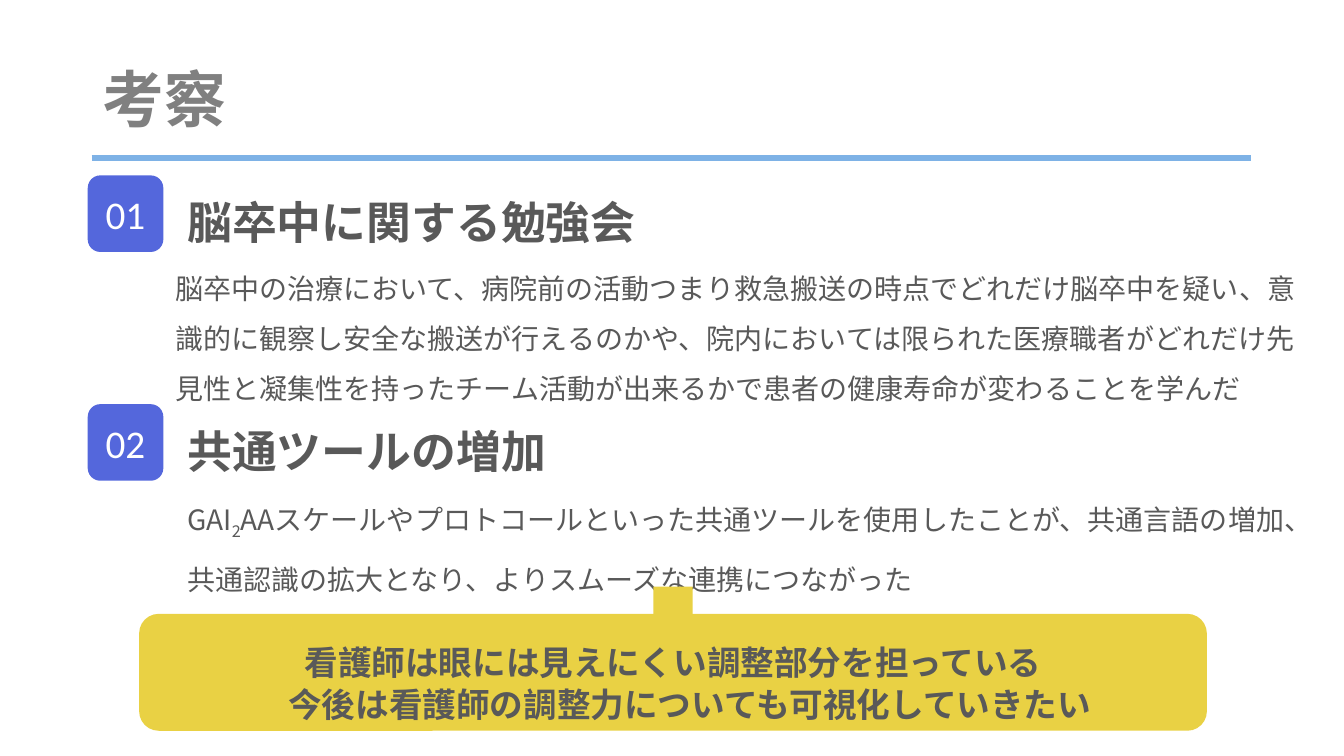
from dataclasses import dataclass

import pptx
import pptx.dml.color
import pptx.enum.shapes
import pptx.enum.text
import pptx.oxml.ns
import pptx.util
from lxml import etree

Inches = pptx.util.Inches
Pt = pptx.util.Pt
SHAPES = pptx.enum.shapes.MSO_SHAPE
ANCHOR = pptx.enum.text.MSO_ANCHOR
ALIGN = pptx.enum.text.PP_ALIGN

COLORS = {
    "title": "808080",
    "body": "595959",
    "rule": "7EB2E6",
    "badge": "5467DC",
    "conclusion": "E9D144",
    "white": "FFFFFF",
}
CALIBRI = "Calibri"
NOTO = "Noto Sans CJK JP"


@dataclass
class Style:
    size: float
    color: str
    font: str = NOTO
    bold: bool = False


@dataclass
class Section:
    number: str
    heading: str
    top: float
    heading_width: float


@dataclass
class Body:
    left: float
    top: float
    width: float
    height: float
    top_inset: float
    spacing: float
    spans: list[tuple[str, bool]]  # text, subscript


TITLE = Style(44, "title", CALIBRI, True)
HEADING = Style(32, "body", CALIBRI, True)
BADGE = Style(28, "white", CALIBRI)
BODY = Style(20, "body")
CONCLUSION = Style(24, "body", bold=True)

SECTIONS = [
    Section("01", "脳卒中に関する勉強会", 1.74, 4.92),
    Section("02", "共通ツールの増加", 4.01, 4.46),
]
BODIES = [
    Body(1.64, 2.44, 11.5, 1.57, 0.09, 35.7, [
        ("脳卒中の治療において、病院前の活動つまり救急搬送の時点でどれだけ脳卒中を疑い、"
         "意識的に観察し安全な搬送が行えるのかや、院内においては限られた医療職者が"
         "どれだけ先見性と凝集性を持ったチーム活動が出来るかで患者の健康寿命が"
         "変わることを学んだ", False),
    ]),
    Body(1.76, 4.77, 11.26, 1.41, 0.05, 39.3, [
        ("GAI", False),
        ("2", True),
        ("AAスケールやプロトコールといった共通ツールを使用したことが、共通言語の増加、"
         "共通認識の拡大となり、よりスムーズな連携につながった", False),
    ]),
]
CONCLUSION_LINES = [
    ("看護師は眼には見えにくい調整部分を担っている", 0),
    ("今後は看護師の調整力についても可視化していきたい", 0.33),
]


def rgb(name: str) -> pptx.dml.color.RGBColor:
    return pptx.dml.color.RGBColor.from_string(COLORS[name])


def add_span(para, text: str, style: Style, subscript: bool = False) -> None:
    span = para.add_run()
    span.text = text
    span.font.size = Pt(style.size)
    span.font.bold = style.bold
    span.font.color.rgb = rgb(style.color)
    span.font.name = style.font
    properties = span.font._element
    etree.SubElement(properties, pptx.oxml.ns.qn("a:ea"), typeface=NOTO)
    if subscript:
        properties.set("baseline", "-25000")


def add_text_box(shapes, left: float, top: float, width: float, height: float):
    box = shapes.add_textbox(Inches(left), Inches(top), Inches(width), Inches(height))
    box.text_frame.word_wrap = True
    return box


def add_filled_shape(shapes, kind, left: float, top: float, width: float,
                     height: float, color: str):
    box = shapes.add_shape(kind, Inches(left), Inches(top), Inches(width), Inches(height))
    box.shadow.inherit = False
    box.fill.solid()
    box.fill.fore_color.rgb = rgb(color)
    box.line.fill.background()
    box.text_frame.vertical_anchor = ANCHOR.MIDDLE
    return box


def add_title(page) -> None:
    frame = add_text_box(page.shapes, 0.92, 0.29, 11.5, 1.45).text_frame
    frame.vertical_anchor = ANCHOR.MIDDLE
    para = frame.paragraphs[0]
    para.line_spacing = 0.9
    add_span(para, "考察", TITLE)


def add_rule(page) -> None:
    rule = page.shapes.add_connector(
        pptx.enum.shapes.MSO_CONNECTOR.STRAIGHT,
        Inches(0.91), Inches(1.57), Inches(12.41), Inches(1.57))
    rule.line.color.rgb = rgb("rule")
    rule.line.width = Pt(4)
    etree.SubElement(rule._element.spPr, pptx.oxml.ns.qn("a:effectLst"))


def add_body(page, body: Body) -> None:
    box = add_text_box(page.shapes, body.left, body.top, body.width, body.height)
    box.text_frame.margin_top = Inches(body.top_inset)
    para = box.text_frame.paragraphs[0]
    para.line_spacing = Pt(body.spacing)
    for text, subscript in body.spans:
        add_span(para, text, BODY, subscript)


def add_section(page, section: Section) -> None:
    """Group a numbered badge with its heading."""
    group = page.shapes.add_group_shape()
    heading = add_text_box(group.shapes, 1.76, section.top + 0.11,
                           section.heading_width, 0.64)
    para = heading.text_frame.paragraphs[0]
    para.line_spacing = Pt(41)
    add_span(para, section.heading, HEADING)

    badge = add_filled_shape(group.shapes, SHAPES.ROUNDED_RECTANGLE,
                             0.87, section.top, 0.75, 0.76, "badge")
    para = badge.text_frame.paragraphs[0]
    para.alignment = ALIGN.CENTER
    add_span(para, section.number, BADGE)


def add_conclusion(page) -> None:
    add_filled_shape(page.shapes, SHAPES.RECTANGLE, 6.48, 5.82, 0.39, 0.3, "conclusion")
    box = add_filled_shape(page.shapes, SHAPES.ROUNDED_RECTANGLE,
                           1.38, 6.09, 10.59, 1.16, "conclusion")
    frame = box.text_frame
    frame.word_wrap = True
    frame.margin_top = Inches(0.25)
    for index, (text, indent) in enumerate(CONCLUSION_LINES):
        para = frame.add_paragraph() if index else frame.paragraphs[0]
        para.alignment = ALIGN.CENTER
        para.line_spacing = Pt(30)
        para._p.get_or_add_pPr().set("marL", str(Inches(indent)))
        add_span(para, text, CONCLUSION)


def main() -> None:
    deck = pptx.Presentation()
    deck.slide_width = Inches(13.33)
    deck.slide_height = Inches(7.5)
    page = deck.slides.add_slide(deck.slide_layouts[6])
    add_title(page)
    add_rule(page)
    for body in BODIES:
        add_body(page, body)
    for section in SECTIONS:
        add_section(page, section)
    add_conclusion(page)
    deck.save("out.pptx")


if __name__ == "__main__":
    main()
